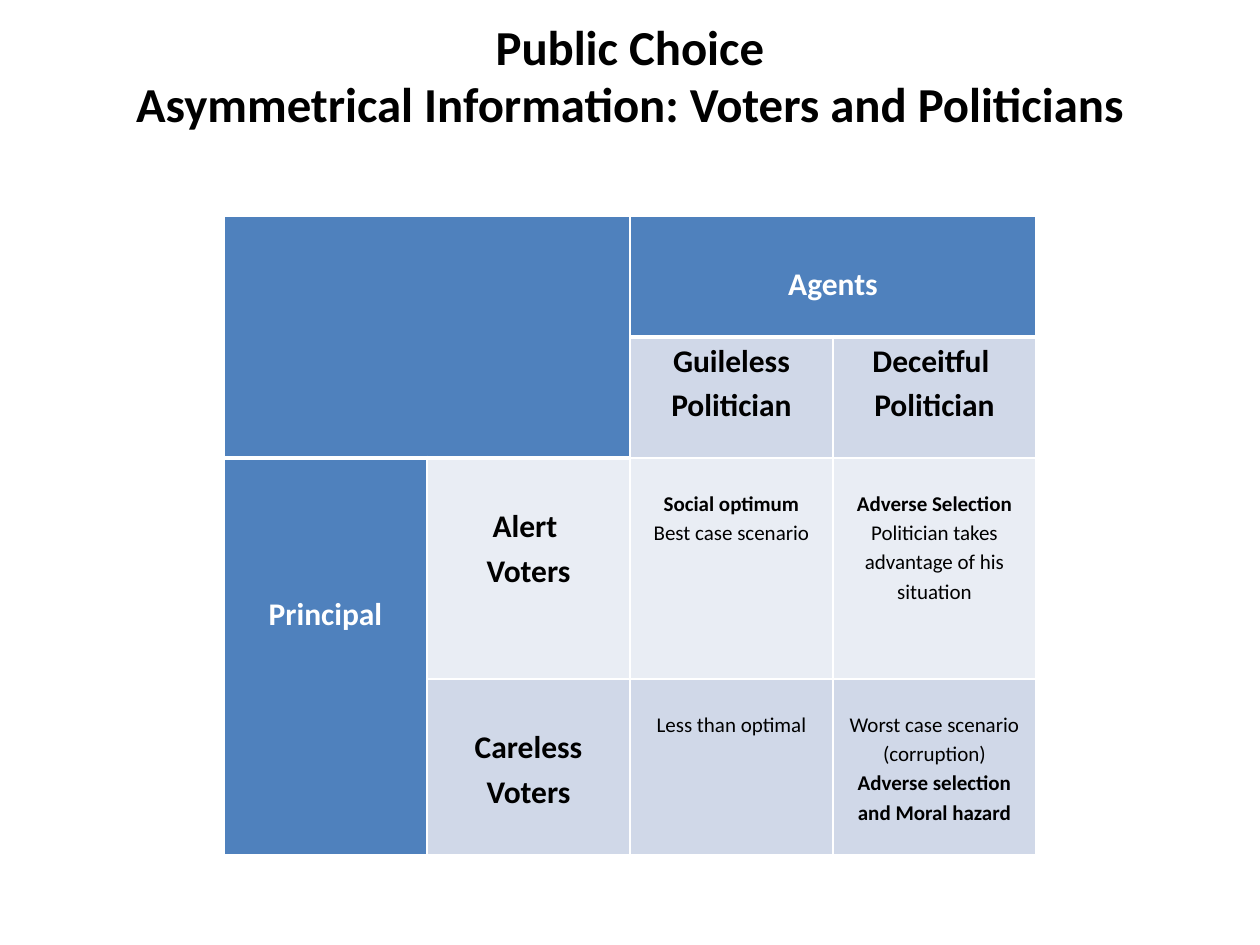
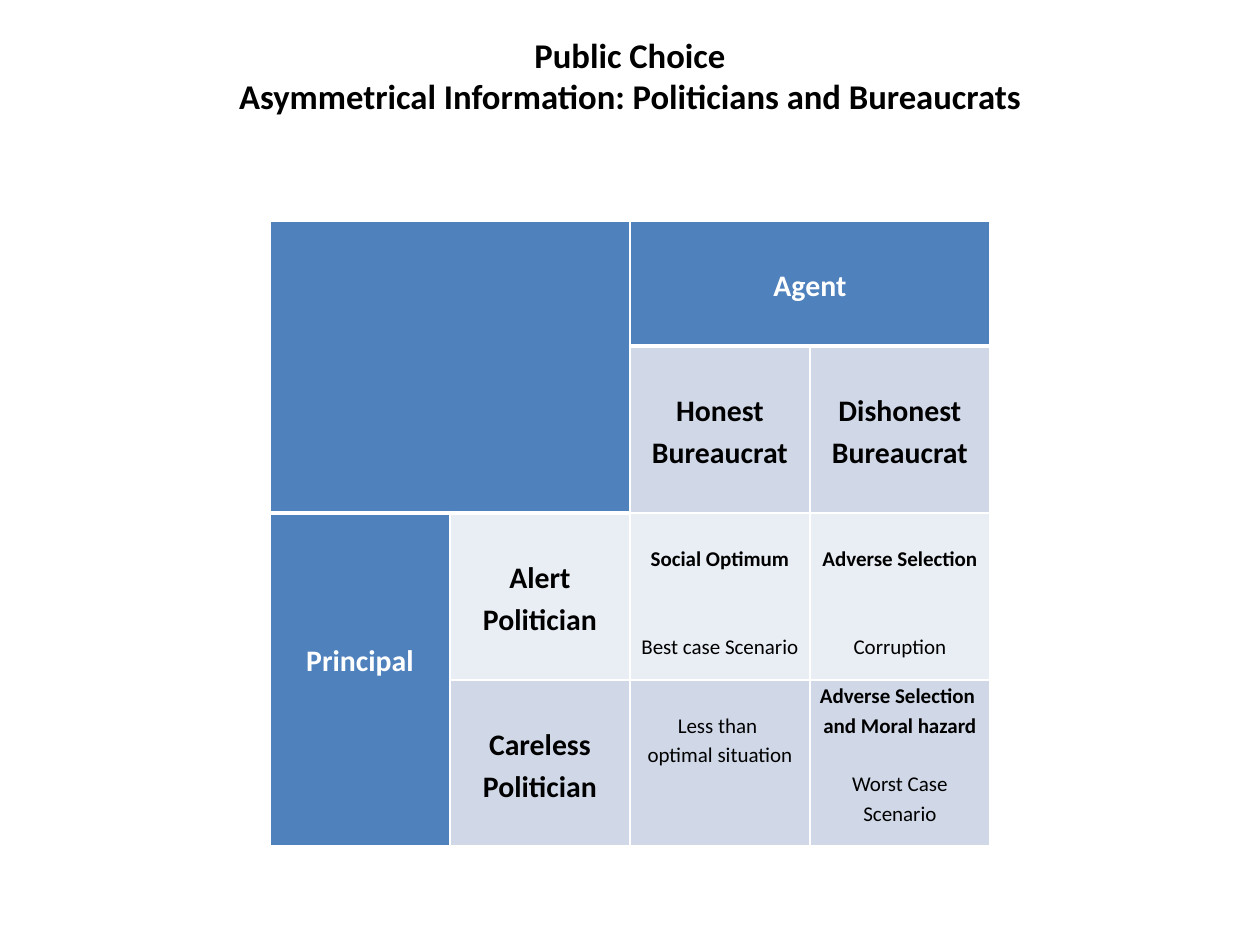
from collections import namedtuple

from lxml.etree import SubElement
from pptx import Presentation
from pptx.dml.color import RGBColor
from pptx.enum.text import MSO_ANCHOR, PP_ALIGN
from pptx.oxml.ns import qn
from pptx.util import Emu, Pt

# Shared style
WHITE = RGBColor(0xFF, 0xFF, 0xFF)
BLACK = RGBColor(0x00, 0x00, 0x00)
BLUE = RGBColor(0x4F, 0x81, 0xBD)
DARK_BAND = RGBColor(0xD0, 0xD8, 0xE8)
LIGHT_BAND = RGBColor(0xE9, 0xED, 0xF4)
FONT = "Calibri"
BODY_SIZE = 12
LINE_SPACING = 1.15
LINE_PITCH = 1.4  # spaced line height as a multiple of the font size
PX_PER_INCH = 126
SLIDE_WIDTH, SLIDE_HEIGHT = 1260, 945

# lines_above: how many text lines the content sits below the cell's top
Cell = namedtuple("Cell", "lines_above lines")
Line = namedtuple("Line", "text bold lines_before", defaults=(False, 0))


def px(length):
    return Emu(round(length * 914400 / PX_PER_INCH))


def heading(lines_above, *texts):
    return Cell(lines_above, [Line(text, True) for text in texts])


class Deck:
    def __init__(self):
        self.presentation = Presentation()
        self.presentation.slide_width = px(SLIDE_WIDTH)
        self.presentation.slide_height = px(SLIDE_HEIGHT)
        self.slide = None

    def add_slide(self):
        layout = self.presentation.slide_layouts[6]
        self.slide = self.presentation.slides.add_slide(layout)

    def style(self, paragraph, size, color, bold, spacing):
        paragraph.alignment = PP_ALIGN.CENTER
        paragraph.line_spacing = spacing
        font = paragraph.font
        font.name, font.size, font.bold = FONT, Pt(size), bold
        font.color.rgb = color

    def title(self, text, size):
        box = self.slide.shapes.add_textbox(px(63), px(8), px(1134), px(138))
        frame = box.text_frame
        frame.word_wrap = True
        frame.vertical_anchor = MSO_ANCHOR.MIDDLE
        frame.margin_top = frame.margin_bottom = 0
        paragraph = frame.paragraphs[0]
        paragraph.text = text
        self.style(paragraph, size, BLACK, True, 0.97)

    def borders(self, cell, top, bottom):
        properties = cell._tc.get_or_add_tcPr()
        for side, width in (("L", 1), ("R", 1), ("T", top), ("B", bottom)):
            line = SubElement(properties, qn(f"a:ln{side}"), w=str(Pt(width)))
            fill = SubElement(line, qn("a:solidFill"))
            SubElement(fill, qn("a:srgbClr"), val=str(WHITE))

    def fill_cell(self, cell, content, size, color, inset):
        cell.margin_left = cell.margin_right = px(inset)
        cell.margin_top = Pt(content.lines_above * size * LINE_PITCH)
        cell.margin_bottom = 0
        frame = cell.text_frame
        for index, line in enumerate(content.lines):
            paragraph = frame.add_paragraph() if index else frame.paragraphs[0]
            paragraph.text = line.text
            if line.lines_before:
                paragraph.space_before = Pt(line.lines_before * size * LINE_PITCH)
            self.style(paragraph, size, color, line.bold, LINE_SPACING)

    def matrix(self, top, column_width, row_heights, heading_size, inset, contents):
        """Two-by-two matrix with merged headings, centred on the slide."""
        width = 4 * column_width
        table = self.slide.shapes.add_table(
            4, 4, px((SLIDE_WIDTH - width) // 2), px(top),
            px(width), px(sum(row_heights))).table
        table.first_row = table.horz_banding = False
        for column in table.columns:
            column.width = px(column_width)
        for row, height in zip(table.rows, row_heights):
            row.height = px(height)

        # Fills and borders, with a thick rule under the headings
        for row in range(4):
            for column in range(4):
                cell = table.cell(row, column)
                last_header_row = 1 if column < 2 else 0
                self.borders(cell,
                             top=3 if row == last_header_row + 1 else 1,
                             bottom=3 if row <= last_header_row else 1)
                is_blue = row <= last_header_row or column == 0
                band = LIGHT_BAND if row == 2 else DARK_BAND
                cell.fill.solid()
                cell.fill.fore_color.rgb = BLUE if is_blue else band

        # Merged corner, agent heading and principal heading
        for first, last in (((0, 0), (1, 1)), ((0, 2), (0, 3)), ((2, 0), (3, 0))):
            table.cell(*first).merge(table.cell(*last))

        # Text
        for (row, column), content in contents.items():
            is_body = row > 1 and column > 1
            color = WHITE if row == 0 or column == 0 else BLACK
            self.fill_cell(table.cell(row, column), content,
                           BODY_SIZE if is_body else heading_size, color, inset)


def main():
    deck = Deck()

    # Voters and politicians
    deck.add_slide()
    deck.title("Public Choice\vAsymmetrical Information: Voters and Politicians", 27.9)
    deck.matrix(216, 203, (121, 121, 221, 176), 18, 9, {
        (0, 2): heading(1, "Agents"),
        (1, 2): heading(0, "Guileless", "Politician"),
        (1, 3): heading(0, "Deceitful ", "Politician"),
        (2, 0): heading(3, "Principal"),
        (2, 1): heading(1, "Alert ", "Voters"),
        (3, 1): heading(1, "Careless", "Voters"),
        (2, 2): Cell(1, [Line("Social optimum", True), Line("Best case scenario")]),
        (2, 3): Cell(1, [Line("Adverse Selection", True),
                         Line("Politician takes advantage of his situation")]),
        (3, 2): Cell(1, [Line("Less than optimal")]),
        (3, 3): Cell(1, [Line("Worst case scenario"), Line("(corruption)"),
                         Line("Adverse selection and Moral hazard", True)]),
    })

    # Politicians and bureaucrats
    deck.add_slide()
    deck.title("Public Choice\vAsymmetrical Information: Politicians and Bureaucrats", 19.8)
    deck.matrix(221, 180, (125, 167, 167, 166), 17, 8, {
        (0, 2): heading(1, "Agent"),
        (1, 2): heading(1, "Honest Bureaucrat"),
        (1, 3): heading(1, "Dishonest Bureaucrat"),
        (2, 0): heading(3, "Principal"),
        (2, 1): heading(1, "Alert Politician"),
        (3, 1): heading(1, "Careless Politician"),
        (2, 2): Cell(1, [Line("Social Optimum", True),
                         Line("Best case Scenario", lines_before=2)]),
        (2, 3): Cell(1, [Line("Adverse Selection", True),
                         Line("Corruption", lines_before=2)]),
        (3, 2): Cell(1, [Line("Less than "), Line("optimal situation")]),
        (3, 3): Cell(0, [Line("Adverse Selection ", True),
                         Line("and Moral hazard", True),
                         Line("Worst Case Scenario", lines_before=1)]),
    })

    deck.presentation.save("out.pptx")


if __name__ == "__main__":
    main()
